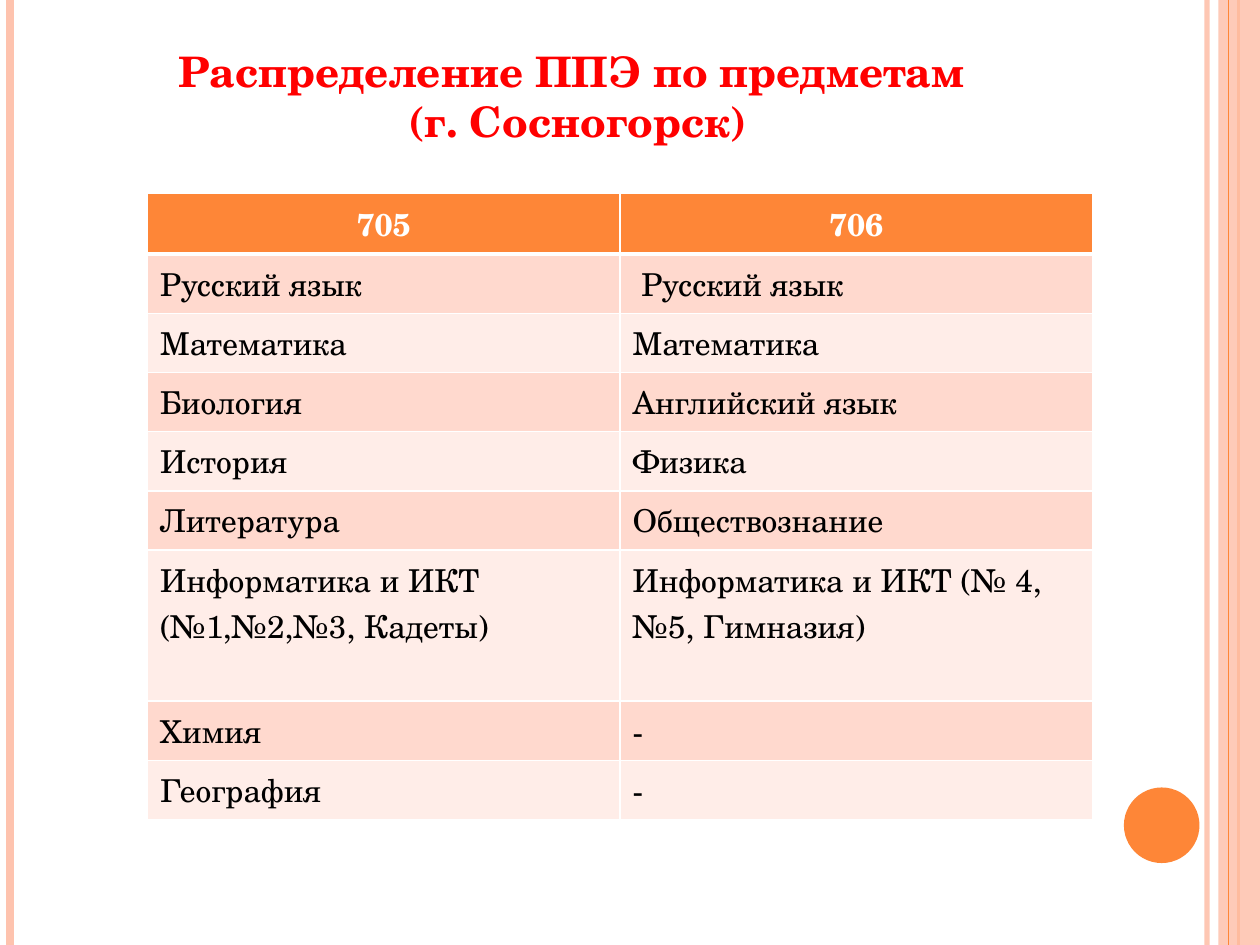
"""Build the slide that lists exam subjects by exam point."""
from dataclasses import dataclass

import pptx
import pptx.dml.color
import pptx.enum.shapes
import pptx.enum.text
import pptx.oxml
import pptx.oxml.ns
import pptx.util

Inches = pptx.util.Inches
Pt = pptx.util.Pt
ALIGN = pptx.enum.text.PP_ALIGN
SHAPE = pptx.enum.shapes.MSO_SHAPE


@dataclass(frozen=True)
class Theme:
    font: str = "TeX Gyre Schola"
    accent: str = "FE8637"
    stripe: str = "FEC3AE"
    heading: str = "FF0000"
    body: str = "000000"
    white: str = "FFFFFF"
    bands: tuple = ("FFD9CE", "FFEDE8")
    heading_size: int = 24
    table_size: int = 18


THEME = Theme()
HEADING = ["Распределение ППЭ по предметам ", "(г. Сосногорск)"]
SUBJECTS = [
    ("705", "706"),
    ("Русский язык", " Русский язык"),
    ("Математика", "Математика"),
    ("Биология", "Английский язык"),
    ("История", "Физика"),
    ("Литература", "Обществознание"),
    ("Информатика и ИКТ (№1,№2,№3, Кадеты)", "Информатика и ИКТ (№ 4, №5, Гимназия)"),
    ("Химия", "-"),
    ("География", "-"),
]
TALL_ROW = 6
STRIPES = [
    (9.58, THEME.stripe, 3, 93),
    (0.08, THEME.stripe, 4.5, 100),
    (9.83, THEME.accent, 1.5, 100),
    (9.75, THEME.accent, 0.75, 100),
]


def rgb(value):
    return pptx.dml.color.RGBColor.from_string(value)


def set_opacity(element, percent):
    if percent < 100:
        color = element.find(".//" + pptx.oxml.ns.qn("a:srgbClr"))
        alpha = color.makeelement(pptx.oxml.ns.qn("a:alpha"), {"val": str(percent * 1000)})
        color.append(alpha)


def add_stripe(slide, x, color, width, opacity):
    stripe = slide.shapes.add_connector(
        pptx.enum.shapes.MSO_CONNECTOR.STRAIGHT, Inches(x), 0, Inches(x), Inches(7.5))
    stripe.line.color.rgb = rgb(color)
    stripe.line.width = Pt(width)
    properties = stripe.element.spPr
    set_opacity(properties, opacity)
    properties.append(properties.makeelement(pptx.oxml.ns.qn("a:effectLst"), {}))


def add_block(slide, preset, box, color, opacity=100):
    block = slide.shapes.add_shape(preset, *map(Inches, box))
    block.shadow.inherit = False
    block.fill.solid()
    block.fill.fore_color.rgb = rgb(color)
    block.line.fill.background()
    set_opacity(block.element.spPr, opacity)


def add_text(paragraph, text, size, color, bold, align):
    paragraph.alignment = align
    run = paragraph.add_run()
    run.text = text
    run.font.name = THEME.font
    run.font.size = Pt(size)
    run.font.bold = bold
    run.font.color.rgb = rgb(color)


def fill_heading(slide):
    heading = slide.shapes.title
    heading.left, heading.top = Inches(0.5), Inches(0.31)
    heading.width, heading.height = Inches(8.17), Inches(1.1)
    frame = heading.text_frame
    frame.word_wrap = True
    frame.auto_size = pptx.enum.text.MSO_AUTO_SIZE.NONE
    frame.vertical_anchor = pptx.enum.text.MSO_ANCHOR.TOP
    for index, text in enumerate(HEADING):
        paragraph = frame.add_paragraph() if index else frame.paragraphs[0]
        paragraph.space_before = Pt(0)
        add_text(paragraph, text, THEME.heading_size, THEME.heading, True, ALIGN.CENTER)


def set_borders(cell, top, bottom):
    properties = cell._tc.get_or_add_tcPr()
    for side, width in (("L", 1), ("R", 1), ("T", top), ("B", bottom)):
        properties.append(pptx.oxml.parse_xml(
            f'<a:ln{side} {pptx.oxml.ns.nsdecls("a")} w="{Pt(width)}"><a:solidFill>'
            f'<a:srgbClr val="{THEME.white}"/></a:solidFill></a:ln{side}>'))


def add_subject_table(slide):
    frame = slide.shapes.add_table(
        len(SUBJECTS), 2, Inches(1.17), Inches(1.53), Inches(7.5), Inches(4.96))
    table = frame.table
    for row_index, subjects in enumerate(SUBJECTS):
        header = row_index == 0
        table.rows[row_index].height = Inches(1.2 if row_index == TALL_ROW else 0.47)
        for column, subject in enumerate(subjects):
            cell = table.cell(row_index, column)
            set_borders(cell, 3 if row_index == 1 else 1, 3 if header else 1)
            cell.fill.solid()
            cell.fill.fore_color.rgb = rgb(
                THEME.accent if header else THEME.bands[(row_index - 1) % 2])
            add_text(cell.text_frame.paragraphs[0], subject, THEME.table_size,
                     THEME.white if header else THEME.body, header,
                     ALIGN.CENTER if header else ALIGN.LEFT)


def main():
    deck = pptx.Presentation()
    deck.slide_width, deck.slide_height = Inches(10), Inches(7.5)
    slide = deck.slides.add_slide(deck.slide_layouts[5])
    for stripe in STRIPES[:-1]:
        add_stripe(slide, *stripe)
    add_block(slide, SHAPE.RECTANGLE, (9.67, 0, 0.33, 7.5), THEME.stripe, 87)
    add_stripe(slide, *STRIPES[-1])
    add_block(slide, SHAPE.OVAL, (8.92, 6.25, 0.6, 0.6), THEME.accent)
    fill_heading(slide)
    add_subject_table(slide)
    deck.save("out.pptx")


if __name__ == "__main__":
    main()
